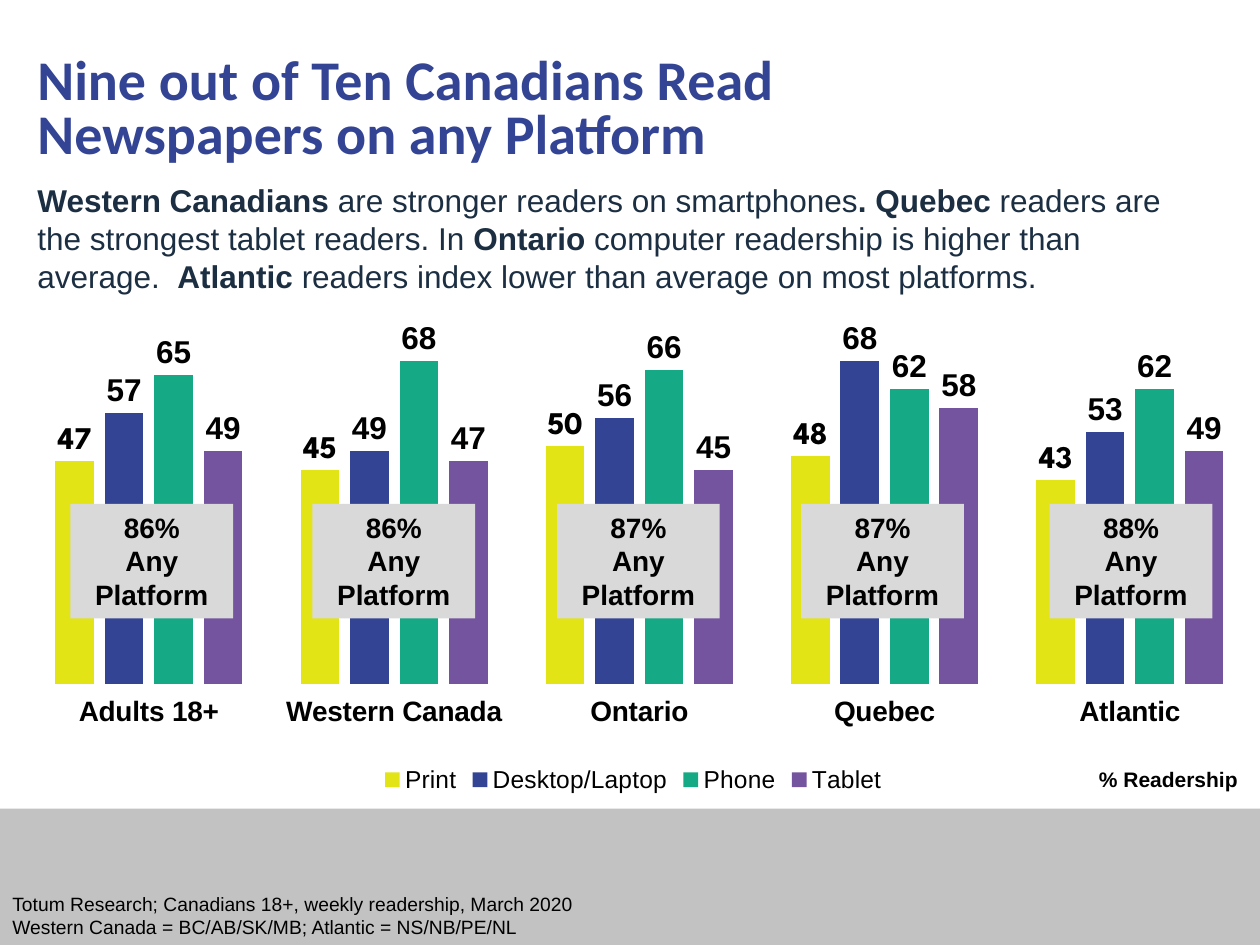
from lxml import etree
from pptx import Presentation
from pptx import util as u
from pptx.chart.data import CategoryChartData
from pptx.dml.color import RGBColor
from pptx.enum import chart as charts, shapes, text
from pptx.oxml import ns

BLACK = RGBColor(0x00, 0x00, 0x00)
NAVY = RGBColor(0x1C, 0x2F, 0x42)
BLUE = RGBColor(0x33, 0x44, 0x95)
YELLOW = RGBColor(0xE3, 0xE4, 0x16)
GREEN = RGBColor(0x16, 0xA9, 0x85)
PURPLE = RGBColor(0x74, 0x53, 0x9F)
BAND_GREY = RGBColor(0xC2, 0xC2, 0xC2)
BOX_GREY = RGBColor(0xD9, 0xD9, 0xD9)

REGIONS = ["Adults 18+", "Western Canada", "Ontario", "Quebec", "Atlantic"]
PLATFORMS = [
    ("Print", [47, 45, 50, 48, 43], YELLOW, "League Spartan"),
    ("Desktop/Laptop", [57, 49, 56, 68, 53], BLUE, "Arial"),
    ("Phone", [65, 68, 66, 62, 62], GREEN, "Arial"),
    ("Tablet", [49, 47, 45, 58, 49], PURPLE, "Arial"),
]
PLOT_AREA = {"x": 0.01, "y": 0.132, "w": 0.99, "h": 0.668}
ANY_PLATFORM = [(1.42, "86%"), (6.3, "86%"), (11.23, "87%"), (16.15, "87%"), (21.16, "88%")]
SUMMARY = [
    ("Western Canadians ", True),
    ("are stronger readers on smartphones", False),
    (". Quebec ", True),
    ("readers are the strongest tablet readers. In ", False),
    ("Ontario", True),
    (" computer readership is higher than average.  ", False),
    ("Atlantic ", True),
    ("readers index lower than average on most platforms.", False),
]


class SlideBuilder:
    def __init__(self, slide, font="Arial", color=BLACK):
        self.slide = slide
        self.font = font
        self.color = color

    def style(self, font, size, bold=False, color=None, name=None):
        values = {"name": name or self.font, "size": u.Pt(size), "bold": bold}
        for key, value in values.items():
            setattr(font, key, value)
        font.color.rgb = color or self.color

    def frame(self, shape, anchor=text.MSO_ANCHOR.TOP):
        values = {"word_wrap": True, "auto_size": text.MSO_AUTO_SIZE.NONE, "vertical_anchor": anchor}
        for key, value in values.items():
            setattr(shape.text_frame, key, value)
        return shape.text_frame

    def fill_text(self, frame, lines, size, bold=False, align=text.PP_ALIGN.LEFT):
        for index, line in enumerate(lines):
            paragraph = frame.add_paragraph() if index else frame.paragraphs[0]
            paragraph.alignment = align
            run = paragraph.add_run()
            run.text = line
            self.style(run.font, size, bold)

    def place(self, shape, left, top, width, height):
        values = {"left": left, "top": top, "width": width, "height": height}
        for key, value in values.items():
            setattr(shape, key, u.Cm(value))

    def title(self, words, *box):
        shape = self.slide.shapes.title
        self.place(shape, *box)
        paragraph = self.frame(shape).paragraphs[0]
        paragraph.alignment = text.PP_ALIGN.LEFT
        paragraph.line_spacing = 0.8
        run = paragraph.add_run()
        run.text = words
        self.style(run.font, 32, True, BLUE, "Calibri")

    def body(self, runs, *box):
        shape = self.slide.placeholders[1]
        self.place(shape, *box)
        paragraph = self.frame(shape).paragraphs[0]
        paragraph.space_before = u.Pt(0)
        properties = paragraph._p.get_or_add_pPr()
        properties.set("marL", "0")
        properties.set("indent", "0")
        etree.SubElement(properties, ns.qn("a:buNone"))
        for words, bold in runs:
            run = paragraph.add_run()
            run.text = words
            self.style(run.font, 18, bold, NAVY)

    def rectangle(self, fill, *box):
        shape = self.slide.shapes.add_shape(shapes.MSO_SHAPE.RECTANGLE, *map(u.Cm, box))
        shape.shadow.inherit = False
        shape.fill.solid()
        shape.fill.fore_color.rgb = fill
        shape.line.fill.background()
        return shape

    def label_box(self, lines, *box):
        frame = self.frame(self.rectangle(BOX_GREY, *box))
        self.fill_text(frame, lines, 16, True, text.PP_ALIGN.CENTER)

    def text_box(self, lines, size, *box, **options):
        shape = self.slide.shapes.add_textbox(*map(u.Cm, box))
        self.fill_text(self.frame(shape), lines, size, **options)

    def column_chart(self, *box):
        data = CategoryChartData()
        data.categories = REGIONS
        for name, values, _, _ in PLATFORMS:
            data.add_series(name, values)
        chart = self.slide.shapes.add_chart(
            charts.XL_CHART_TYPE.COLUMN_CLUSTERED, *map(u.Cm, box), data).chart
        chart.has_title = False
        self.style(chart.font, 18)

        chart.has_legend = True
        chart.legend.position = charts.XL_LEGEND_POSITION.BOTTOM
        chart.legend.include_in_layout = False
        self.style(chart.legend.font, 14)

        axis_values = {"minimum_scale": 0, "maximum_scale": 80,
                       "has_major_gridlines": False, "visible": False}
        for key, value in axis_values.items():
            setattr(chart.value_axis, key, value)
        chart.category_axis.format.line.fill.background()
        self.style(chart.category_axis.tick_labels.font, 16, True)

        plot = chart.plots[0]
        for key, value in {"gap_width": 150, "overlap": -28, "vary_by_categories": False}.items():
            setattr(plot, key, value)
        for series, (_, _, color, font) in zip(plot.series, PLATFORMS):
            series.format.fill.solid()
            series.format.fill.fore_color.rgb = color
            series.data_labels.show_value = True
            series.data_labels.position = charts.XL_LABEL_POSITION.OUTSIDE_END
            self.style(series.data_labels.font, 18, True, name=font)
        self.plot_layout(chart)

    def plot_layout(self, chart):
        plot_area = chart._chartSpace.chart.plotArea
        for old_layout in plot_area.findall(ns.qn("c:layout")):
            plot_area.remove(old_layout)
        layout = etree.Element(ns.qn("c:layout"))
        plot_area.insert(0, layout)
        manual = etree.SubElement(layout, ns.qn("c:manualLayout"))
        settings = {"layoutTarget": "inner", "xMode": "edge", "yMode": "edge", **PLOT_AREA}
        for key, value in settings.items():
            etree.SubElement(manual, ns.qn(f"c:{key}")).set("val", str(value))


def main():
    presentation = Presentation()
    presentation.slide_width = u.Cm(25.4)
    presentation.slide_height = u.Cm(19.05)
    slide = presentation.slides.add_slide(presentation.slide_layouts[1])
    builder = SlideBuilder(slide)

    builder.rectangle(BAND_GREY, 0, 16.3, 25.4, 2.75)
    builder.column_chart(0.28, 4.6, 24.97, 11.5)
    builder.title("Nine out of Ten Canadians Read Newspapers on any Platform", 0.5, 1.04, 21.3, 2.44)
    builder.body(SUMMARY, 0.5, 3.53, 23.7, 2.57)
    builder.text_box(["% Readership"], 12, 21.84, 15.32, 3.43, 0.76,
                     bold=True, align=text.PP_ALIGN.CENTER)
    builder.text_box(["Totum Research; Canadians 18+, weekly readership, March 2020",
                      "Western Canada = BC/AB/SK/MB; Atlantic = NS/NB/PE/NL"],
                     11, 0, 17.87, 20.75, 1.18)
    for left, share in ANY_PLATFORM:
        builder.label_box([share, "Any Platform"], left, 10.16, 3.28, 2.31)
    presentation.save("out.pptx")


if __name__ == "__main__":
    main()
